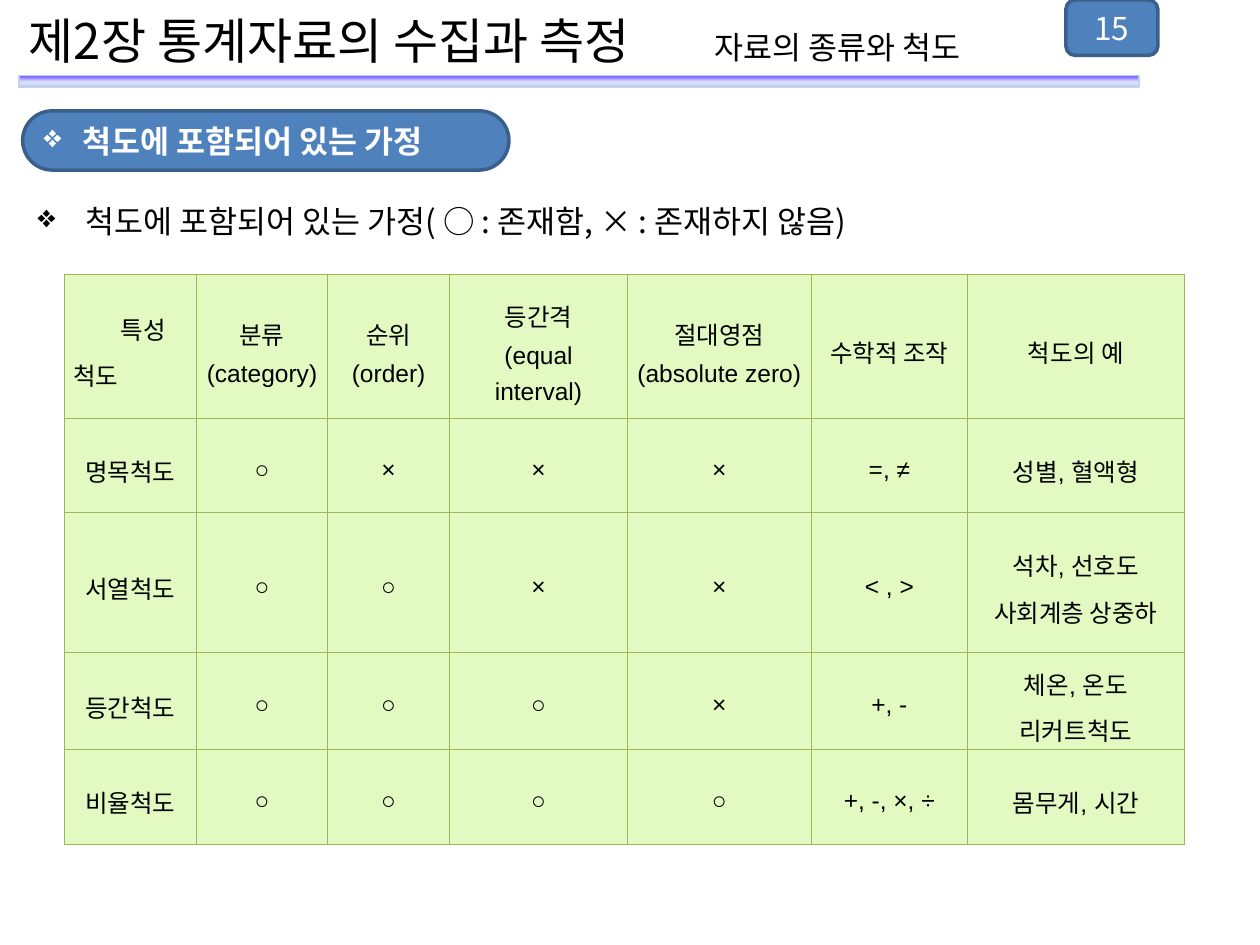
from lxml.etree import SubElement
from pptx import Presentation
from pptx.dml.color import RGBColor
from pptx.enum.shapes import MSO_SHAPE as Shape
from pptx.enum.text import MSO_ANCHOR as Anchor, MSO_AUTO_SIZE as AutoSize, PP_ALIGN as Align
from pptx.oxml.ns import qn
from pptx.util import Inches, Pt

COLORS = {"ink": "000000", "white": "FFFFFF", "badge": "4F81BD", "badge_line": "3A5F8C",
          "rule_line": "C2D1ED", "cell": "E2FAC2", "grid": "98B955"}
RULE_STOPS = [(0, "714AFE"), (53, "D4DEFF"), (83, "D4DEFF"), (100, "96AB94")]
KOREAN, LATIN = "Noto Sans CJK KR", "Arial"

CHAPTER = "제2장 통계자료의 수집과 측정"
TOPIC = "자료의 종류와 척도"
PAGE = "15"
HEADING = "척도에 포함되어 있는 가정"
LEGEND = "척도에 포함되어 있는 가정( ○ : 존재함, × : 존재하지 않음)"
SCALES = [
    ["특성\n척도", "분류\n(category)", "순위\n(order)", "등간격\n(equal interval)",
     "절대영점\n(absolute zero)", "수학적 조작", "척도의 예"],
    ["명목척도", "○", "×", "×", "×", "=, ≠", "성별, 혈액형"],
    ["서열척도", "○", "○", "×", "×", "< , >", "석차, 선호도\n사회계층 상중하"],
    ["등간척도", "○", "○", "○", "×", "+, -", "체온, 온도\n리커트척도"],
    ["비율척도", "○", "○", "○", "○", "+, -, ×, ÷", "몸무게, 시간"],
]
COLUMNS = [1.05, 1.04, 0.97, 1.41, 1.46, 1.24, 1.72]
ROWS = [1.14, 0.75, 1.11, 0.77, 0.75]


def rgb(name):
    return RGBColor.from_string(COLORS[name])


def box(left, top, width, height):
    return [Inches(value) for value in (left, top, width, height)]


def write(paragraph, text, size=18, font=KOREAN, color="ink", bold=False,
          align=Align.LEFT, spacing=None, indent=0, bullet=None, tab=None):
    properties = paragraph._p.get_or_add_pPr()
    if indent:
        properties.set("marL", str(Inches(indent)))
    if bullet:
        properties.set("indent", str(-Inches(indent)))
        SubElement(properties, qn("a:buChar"), char=bullet)
    if tab:
        stops = SubElement(properties, qn("a:tabLst"))
        SubElement(stops, qn("a:tab"), pos=str(Inches(tab)), algn="l")
    paragraph.alignment = align
    if spacing:
        paragraph.line_spacing = spacing
    run = paragraph.add_run()
    run.text = text
    run.font.size, run.font.name, run.font.bold = Pt(size), font, bold
    run.font.color.rgb = rgb(color)
    SubElement(run._r.get_or_add_rPr(), qn("a:ea"), typeface=KOREAN)


def add_badge(slide, place, text, roundness=None, **style):
    badge = slide.shapes.add_shape(Shape.ROUNDED_RECTANGLE, *box(*place))
    badge.shadow.inherit = False
    if roundness:
        badge.adjustments[0] = roundness
    badge.fill.solid()
    badge.fill.fore_color.rgb = rgb("badge")
    badge.line.color.rgb = rgb("badge_line")
    badge.line.width = Pt(2)
    badge.text_frame.vertical_anchor = Anchor.MIDDLE
    write(badge.text_frame.paragraphs[0], text, color="white", **style)


def add_rule(slide):
    rule = slide.shapes.add_shape(Shape.RECTANGLE, *box(0.15, 0.6, 8.89, 0.09))
    rule.shadow.inherit = False
    rule.line.color.rgb = rgb("rule_line")
    rule.line.width = Pt(0.75)
    rule.fill.gradient()
    rule.fill.gradient_angle = 270
    stops = rule._element.spPr.find(".//" + qn("a:gsLst"))
    stops.clear()
    for share, color in RULE_STOPS:
        stop = SubElement(stops, qn("a:gs"), pos=str(share * 1000))
        SubElement(stop, qn("a:srgbClr"), val=color)


def format_cell(cell):
    cell.margin_left = cell.margin_right = Inches(0.07)
    cell.margin_top = cell.margin_bottom = Inches(0.02)
    cell.vertical_anchor = Anchor.MIDDLE
    properties = cell._tc.get_or_add_tcPr()
    for side in ("lnL", "lnR", "lnT", "lnB"):
        border = SubElement(properties, qn("a:" + side), w=str(Pt(0.75)))
        fill = SubElement(border, qn("a:solidFill"))
        SubElement(fill, qn("a:srgbClr"), val=COLORS["grid"])
    cell.fill.solid()
    cell.fill.fore_color.rgb = rgb("cell")


def add_scales(slide):
    place = box(0.51, 2.18, sum(COLUMNS), sum(ROWS))
    table = slide.shapes.add_table(len(ROWS), len(COLUMNS), *place).table
    table.first_row = table.horz_banding = False
    for column, width in zip(table.columns, COLUMNS):
        column.width = Inches(width)
    for row, height in zip(table.rows, ROWS):
        row.height = Inches(height)
    for r, entries in enumerate(SCALES):
        for c, entry in enumerate(entries):
            cell = table.cell(r, c)
            format_cell(cell)
            corner = r == c == 0
            for i, line in enumerate(entry.split("\n")):
                frame = cell.text_frame
                paragraph = frame.add_paragraph() if i else frame.paragraphs[0]
                write(paragraph, line, size=14, font=LATIN, spacing=1.3,
                      align=Align.JUSTIFY if corner else Align.CENTER,
                      indent=0.38 if corner and i == 0 else 0)


def main():
    deck = Presentation()
    deck.slide_width, deck.slide_height = Inches(10), Inches(7.5)
    slide = deck.slides.add_slide(deck.slide_layouts[5])

    title = slide.shapes.title
    title.left, title.top, title.width, title.height = box(0.13, 0.01, 8.73, 0.61)
    title.text_frame.auto_size = AutoSize.NONE
    title.text_frame.vertical_anchor = Anchor.MIDDLE
    heading = title.text_frame.paragraphs[0]
    write(heading, CHAPTER, size=28, tab=5.44)
    write(heading, "\t" + TOPIC, font=LATIN)

    add_rule(slide)
    legend = slide.shapes.add_textbox(*box(0.2, 1.55, 9.53, 0.45)).text_frame
    legend.word_wrap = True
    write(legend.paragraphs[0], LEGEND, indent=0.38, bullet="❖")
    add_badge(slide, (0.18, 0.88, 3.86, 0.47), HEADING, roundness=0.5,
              bold=True, indent=0.31, bullet="❖")
    add_scales(slide)
    add_badge(slide, (8.46, 0, 0.73, 0.44), PAGE, align=Align.CENTER)
    deck.save("out.pptx")


if __name__ == "__main__":
    main()
